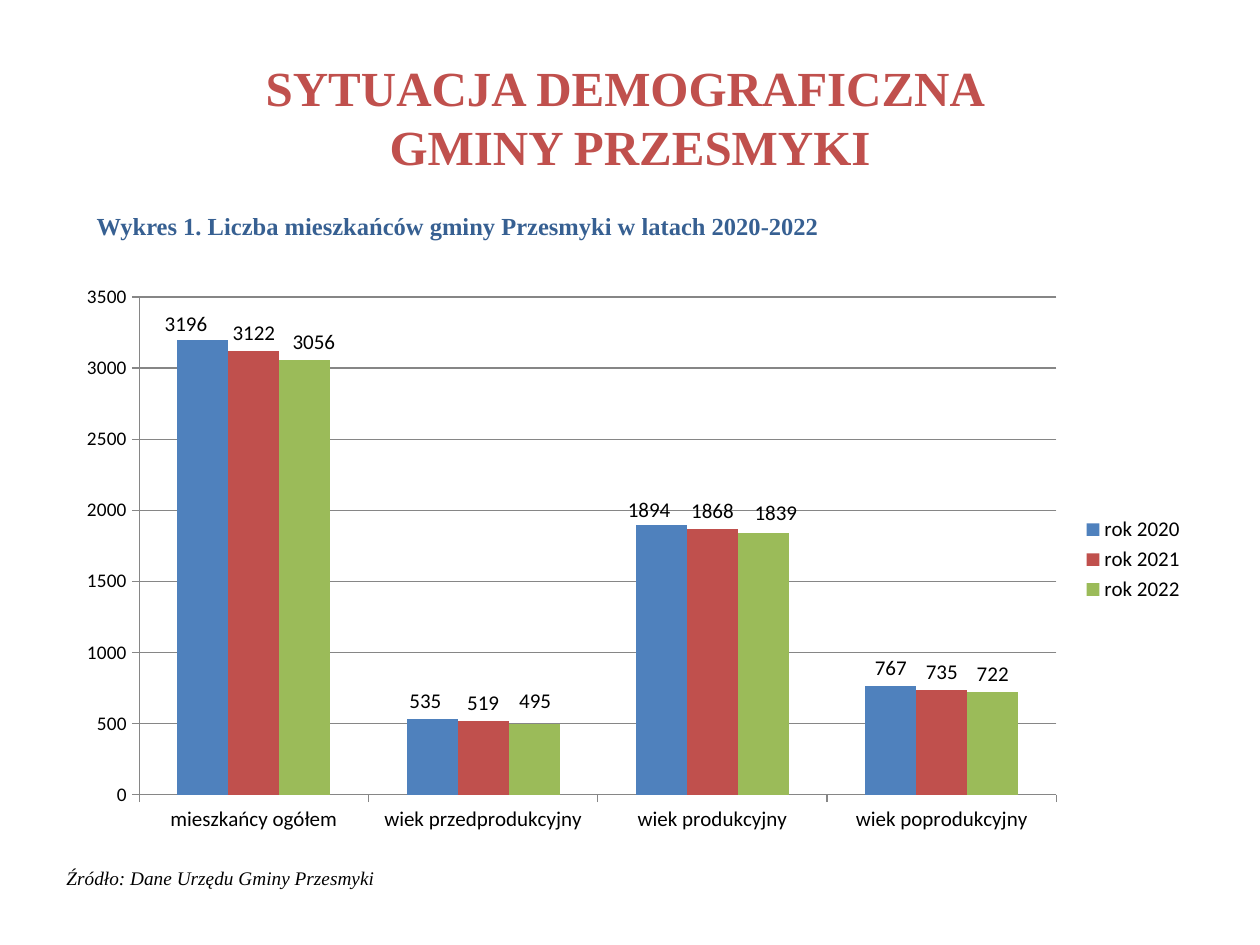
from lxml import etree
from pptx import Presentation
from pptx.chart.data import CategoryChartData
from pptx.dml.color import RGBColor
from pptx.enum.chart import XL_CHART_TYPE, XL_LABEL_POSITION, XL_LEGEND_POSITION, XL_TICK_MARK
from pptx.enum.text import MSO_ANCHOR, PP_ALIGN
from pptx.oxml import parse_xml
from pptx.oxml.ns import nsdecls, qn
from pptx.util import Cm, Pt

CLUSTERED = XL_CHART_TYPE.COLUMN_CLUSTERED
OUTSIDE_END = XL_LABEL_POSITION.OUTSIDE_END
LEGEND_RIGHT = XL_LEGEND_POSITION.RIGHT
TICK_OUTSIDE = XL_TICK_MARK.OUTSIDE
MIDDLE = MSO_ANCHOR.MIDDLE
LEFT, CENTER = PP_ALIGN.LEFT, PP_ALIGN.CENTER

COLORS = {
    "title": "C0504D",
    "caption": "376092",
    "text": "000000",
    "axis": "868686",
    "rok 2020": "4F81BD",
    "rok 2021": "C0504D",
    "rok 2022": "9BBB59",
}
AGE_GROUPS = ["mieszkańcy ogółem", "wiek przedprodukcyjny", "wiek produkcyjny", "wiek poprodukcyjny"]
POPULATION = {
    "rok 2020": [3196, 535, 1894, 767],
    "rok 2021": [3122, 519, 1868, 735],
    "rok 2022": [3056, 495, 1839, 722],
}
LABEL_SHIFTS = {
    "rok 2020": [(-0.015, 0.003), (-0.006, 0), (-0.011, 0.004)],
    "rok 2022": [(0.008, 0), (0.001, -0.01), (0.011, -0.005)],
}
PLOT_AREA = {"x": 0.066, "y": 0.039, "w": 0.81, "h": 0.874}


def color(name):
    """Return the named colour."""
    return RGBColor.from_string(COLORS[name])


def add_text(slide, text, left, top, width, height, *, size, fill="text",
             bold=False, italic=False, align=LEFT, wrap=True):
    """Add a text box with one formatted paragraph."""
    frame = slide.shapes.add_textbox(Cm(left), Cm(top), Cm(width), Cm(height)).text_frame
    frame.word_wrap = wrap
    frame.vertical_anchor = MIDDLE
    paragraph = frame.paragraphs[0]
    paragraph.text = text
    paragraph.alignment = align
    for run in paragraph.runs:
        set_font(run.font, size, "Times New Roman", fill)
        run.font.bold, run.font.italic = bold, italic


def set_font(font, size, name="Calibri", fill="text"):
    """Set size, typeface and colour of a font."""
    font.size, font.name = Pt(size), name
    font.color.rgb = color(fill)


def set_layout(parent, position, index, **modes):
    """Give a chart part a manual layout."""
    for old in parent.findall(qn("c:layout")):
        parent.remove(old)
    layout = parse_xml(f"<c:layout {nsdecls('c')}><c:manualLayout/></c:layout>")
    for tag, value in {**modes, **position}.items():
        etree.SubElement(layout[0], qn(f"c:{tag}"), val=str(value))
    parent.insert(index, layout)


def style_line(line):
    """Draw a thin grey chart line."""
    line.color.rgb = color("axis")
    line.width = Pt(0.75)


def style_axis(axis, size):
    """Format an axis with outside ticks."""
    axis.major_tick_mark = TICK_OUTSIDE
    set_font(axis.tick_labels.font, size)
    style_line(axis.format.line)


def style_series(series):
    """Colour a year's columns and place their value labels."""
    series.format.fill.solid()
    series.format.fill.fore_color.rgb = color(series.name)
    series.invert_if_negative = False
    labels = series.data_labels
    labels.show_value = True
    labels.position = OUTSIDE_END
    set_font(labels.font, 12)
    shifts = LABEL_SHIFTS.get(series.name, [])
    for index in range(len(shifts)):
        label = series.points[index].data_label
        set_font(label.font, 12)
        label.position = OUTSIDE_END
    for element, (x, y) in zip(series._element.xpath("c:dLbls/c:dLbl"), shifts):
        set_layout(element, {"x": x, "y": y}, 1)


def add_population_chart(slide, left, top, width, height):
    """Add the clustered column chart of residents by age group."""
    data = CategoryChartData()
    data.categories = AGE_GROUPS
    for year, values in POPULATION.items():
        data.add_series(year, values)
    chart = slide.shapes.add_chart(CLUSTERED, Cm(left), Cm(top), Cm(width), Cm(height), data).chart
    set_font(chart.font, 18)
    chart.has_title = False
    chart.has_legend = True
    chart.legend.position = LEGEND_RIGHT
    chart.legend.include_in_layout = False
    set_font(chart.legend.font, 12)
    style_axis(chart.category_axis, 12)
    style_axis(chart.value_axis, 11)
    chart.value_axis.minimum_scale, chart.value_axis.maximum_scale = 0, 3500
    chart.value_axis.major_unit = 500
    style_line(chart.value_axis.major_gridlines.format.line)
    plot = chart.plots[0]
    plot.gap_width, plot.overlap = 150, 0
    plot.vary_by_categories = False
    for series in plot.series:
        style_series(series)
    plot_area = chart._chartSpace.chart.plotArea
    set_layout(plot_area, PLOT_AREA, 0, layoutTarget="inner", xMode="edge", yMode="edge")


def main():
    """Build the demography slide."""
    deck = Presentation()
    deck.slide_width, deck.slide_height = Cm(25.4), Cm(19.05)
    slide = deck.slides.add_slide(deck.slide_layouts[6])
    add_text(slide, "SYTUACJA DEMOGRAFICZNA \vGMINY PRZESMYKI", 1.27, 0.76, 22.86, 3.18,
             size=28, fill="title", bold=True, align=CENTER)
    add_text(slide, "Wykres 1. Liczba mieszkańców gminy Przesmyki w latach 2020-2022",
             1.7, 4.11, 21.82, 0.89, size=14, fill="caption", bold=True)
    add_population_chart(slide, 1.3, 5.54, 22.83, 11.48)
    add_text(slide, "Źródło: Dane Urzędu Gminy Przesmyki", 1.09, 17.32, 6.76, 0.74,
             size=11, italic=True, wrap=False)
    deck.save("out.pptx")


if __name__ == "__main__":
    main()
